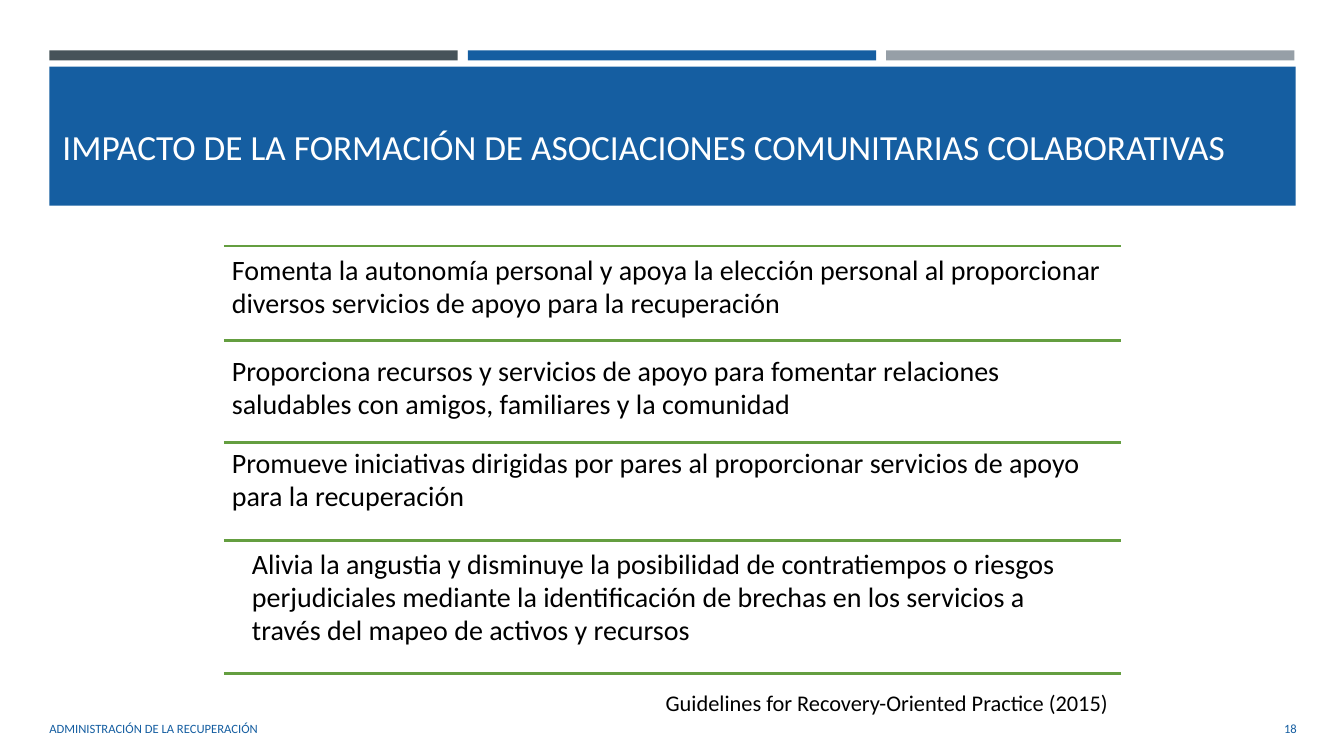
"""Build the slide on the impact of collaborative community partnerships."""
import pptx
import pptx.dml.color
import pptx.enum.shapes
import pptx.enum.text
import pptx.oxml
import pptx.util

RGBColor = pptx.dml.color.RGBColor
Inches = pptx.util.Inches
Align = pptx.enum.text.PP_ALIGN
Anchor = pptx.enum.text.MSO_ANCHOR

BLUE = RGBColor(0x15, 0x5E, 0xA1)
SLATE = RGBColor(0x46, 0x53, 0x59)
GRAY = RGBColor(0x96, 0x9F, 0xA7)
GREEN = RGBColor(0x64, 0x9E, 0x40)
WHITE = RGBColor(0xFF, 0xFF, 0xFF)
BLACK = RGBColor(0x00, 0x00, 0x00)

WIDTH, HEIGHT = Inches(13.33), Inches(7.5)
MARGIN, BAR_WIDTH, BAR_STEP = 3.68, 30.38, 31.13
LIST_LEFT, LIST_WIDTH = 16.65, 66.77
RULE_ROWS = (32.53, 45.07, 58.53, 71.47, 89.07)
IMPACTS = (
    (LIST_LEFT, 32.53, LIST_WIDTH, 14.8,
     "Fomenta la autonomía personal y apoya la elección personal al "
     "proporcionar diversos servicios de apoyo para la recuperación"),
    (LIST_LEFT, 45.87, LIST_WIDTH, 14.8,
     "Proporciona recursos y servicios de apoyo para fomentar relaciones "
     "saludables con amigos, familiares y la comunidad"),
    (LIST_LEFT, 58.13, LIST_WIDTH, 14.8,
     "Promueve iniciativas dirigidas por pares al proporcionar servicios "
     "de apoyo para la recuperación"),
    (18.15, 71.47, 63.69, 12.27,
     "Alivia la angustia y disminuye la posibilidad de contratiempos o "
     "riesgos perjudiciales mediante la identificación de brechas en los "
     "servicios a través del mapeo de activos y recursos"),
)


def across(share):
    """Return a percentage of the slide width."""
    return round(WIDTH * share / 100)


def down(share):
    """Return a percentage of the slide height."""
    return round(HEIGHT * share / 100)


def area(left, top, width, height):
    """Return a rectangle given in percentages as slide lengths."""
    return across(left), down(top), across(width), down(height)


def write(frame, text, size, color, align=Align.LEFT, anchor=Anchor.TOP,
          insets=(0.1, 0.05, 0.1, 0.05), spacing=1.0):
    """Fill a text frame with one formatted paragraph."""
    frame.word_wrap = True
    frame.auto_size = pptx.enum.text.MSO_AUTO_SIZE.NONE
    frame.vertical_anchor = anchor
    (frame.margin_left, frame.margin_top,
     frame.margin_right, frame.margin_bottom) = map(Inches, insets)
    frame.text = text
    paragraph = frame.paragraphs[0]
    paragraph.alignment = align
    paragraph.line_spacing = spacing
    font = paragraph.runs[0].font
    font.name = "Calibri"
    font.size = pptx.util.Pt(size)
    font.color.rgb = color


def add_text(slide, place, text, size, color, **layout):
    """Add a text box."""
    write(slide.shapes.add_textbox(*area(*place)).text_frame,
          text, size, color, **layout)


def add_block(slide, place, color):
    """Add a plain filled rectangle."""
    block = slide.shapes.add_shape(
        pptx.enum.shapes.MSO_SHAPE.RECTANGLE, *area(*place))
    block.shadow.inherit = False
    block.fill.solid()
    block.fill.fore_color.rgb = color
    block.line.fill.background()


def add_rule(slide, row):
    """Add a green horizontal rule across the list."""
    rule = slide.shapes.add_connector(
        pptx.enum.shapes.MSO_CONNECTOR.STRAIGHT, across(LIST_LEFT), down(row),
        across(LIST_LEFT + LIST_WIDTH), down(row))
    rule.line.color.rgb = GREEN
    rule.line.width = pptx.util.Pt(1.75)
    rule._element.spPr.append(pptx.oxml.parse_xml(
        '<a:effectLst xmlns:a='
        '"http://schemas.openxmlformats.org/drawingml/2006/main"/>'))


def add_heading(slide, text):
    """Place the slide title in front of its blue band."""
    add_block(slide, (MARGIN, 8.8, 92.72, 18.4), BLUE)
    title = slide.shapes.title
    slide.shapes._spTree.append(title._element)
    title.left, title.top, title.width, title.height = area(
        3.9, 13.87, 90.47, 14.4)
    write(title.text_frame, text, 25.2, WHITE, anchor=Anchor.BOTTOM,
          insets=(0.1, 0.05, 0.1, 0.46))


def main():
    """Compose and save the slide."""
    deck = pptx.Presentation()
    deck.slide_width, deck.slide_height = WIDTH, HEIGHT
    slide = deck.slides.add_slide(deck.slide_layouts[5])
    for column, color in enumerate((SLATE, BLUE, GRAY)):
        add_block(slide, (MARGIN + column * BAR_STEP, 6.67, BAR_WIDTH, 1.33),
                  color)
    add_heading(slide, "IMPACTO DE LA FORMACIÓN DE ASOCIACIONES "
                       "COMUNITARIAS COLABORATIVAS")
    for row in RULE_ROWS:
        add_rule(slide, row)
    for *place, impact in IMPACTS:
        add_text(slide, place, impact, 20, BLACK,
                 insets=(0.08,) * 4, spacing=0.98)
    add_text(slide, (LIST_LEFT, 87.47, LIST_WIDTH, 8.8),
             "Guidelines for Recovery-Oriented Practice (2015)", 16, BLACK,
             align=Align.RIGHT, insets=(0.05, 0.28, 0.13, 0.05))
    add_text(slide, (2.93, 93.73, 55.96, 5.33),
             "ADMINISTRACIÓN DE LA RECUPERACIÓN", 9, BLUE,
             anchor=Anchor.MIDDLE)
    add_text(slide, (88.6, 93.73, 8.63, 5.33), "18", 9, BLUE,
             align=Align.RIGHT, anchor=Anchor.MIDDLE)
    deck.save("out.pptx")


if __name__ == "__main__":
    main()
